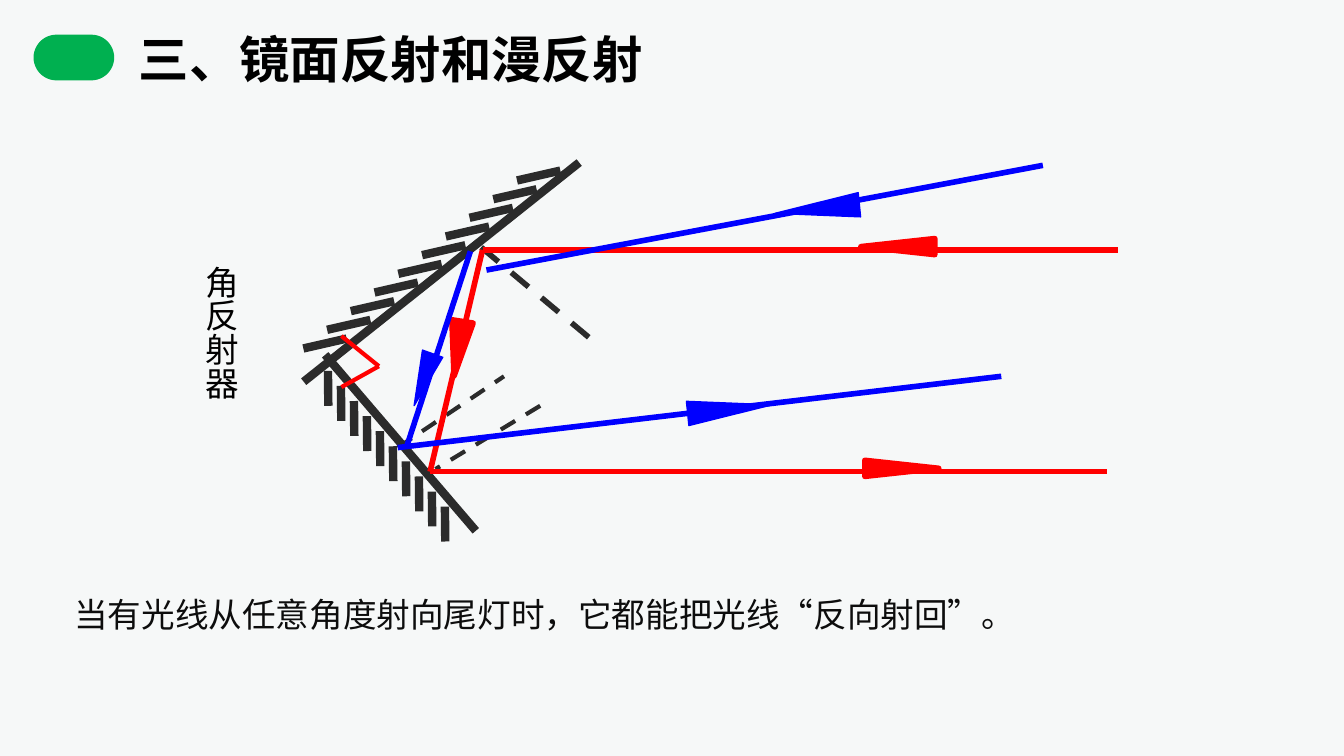
from dataclasses import dataclass
from typing import NamedTuple

from lxml import etree
from pptx import Presentation
from pptx.dml.color import RGBColor
from pptx.enum.dml import MSO_LINE
from pptx.enum.lang import MSO_LANGUAGE_ID
from pptx.enum.shapes import MSO_CONNECTOR, MSO_SHAPE
from pptx.enum.text import MSO_AUTO_SIZE, PP_ALIGN
from pptx.oxml.ns import qn
from pptx.slide import Slide
from pptx.text.text import _Paragraph
from pptx.util import Pt

STRAIGHT = MSO_CONNECTOR.STRAIGHT
TRIANGLE = MSO_SHAPE.ISOSCELES_TRIANGLE
ROUNDED = MSO_SHAPE.ROUNDED_RECTANGLE
DASH = MSO_LINE.DASH
GROW = MSO_AUTO_SIZE.SHAPE_TO_FIT_TEXT
CENTER = PP_ALIGN.CENTER
CHINESE = MSO_LANGUAGE_ID.SIMPLIFIED_CHINESE


@dataclass(frozen=True)
class Theme:
    background: str = "F6F8F8"
    accent: str = "00B050"
    mirror: str = "2B2B2B"
    red: str = "FF0000"
    blue: str = "0000FF"
    black: str = "000000"
    body: str = "0D0D0D"
    font: str = "Arial"
    title_size: float = 27
    body_size: float = 18
    mirror_width: float = 4.5
    ray_width: float = 3
    thin_width: float = 2.25
    edge_width: float = 0.75


THEME = Theme()


class Point(NamedTuple):
    x: float
    y: float


class Box(NamedTuple):
    left: float
    top: float
    width: float
    height: float


class Line(NamedTuple):
    start: Point
    end: Point
    color: str
    width: float
    dashed: bool = False


class Mirror(NamedTuple):
    surface: Line
    first_hatch: Point
    step: Point
    hatch: Point


class Ray(NamedTuple):
    line: Line
    head_center: Point
    head_width: float
    head_length: float
    rotation: float
    edge: float


def draw_line(slide: Slide, line: Line) -> None:
    connector = slide.shapes.add_connector(
        STRAIGHT, *(Pt(v) for v in (*line.start, *line.end)))
    connector.line.color.rgb = RGBColor.from_string(line.color)
    connector.line.width = Pt(line.width)
    if line.dashed:
        connector.line.dash_style = DASH
    properties = connector._element.find(qn("p:spPr"))
    etree.SubElement(properties, qn("a:effectLst"))


def draw_mirror(slide: Slide, mirror: Mirror, hatches: int = 10) -> None:
    for i in range(hatches):
        start = Point(mirror.first_hatch.x + i * mirror.step.x,
                      mirror.first_hatch.y + i * mirror.step.y)
        end = Point(start.x + mirror.hatch.x, start.y + mirror.hatch.y)
        draw_line(slide, Line(start, end, THEME.mirror, THEME.mirror_width))
    draw_line(slide, mirror.surface)


def draw_ray(slide: Slide, ray: Ray) -> None:
    draw_line(slide, ray.line)
    color = RGBColor.from_string(ray.line.color)
    head = slide.shapes.add_shape(
        TRIANGLE,
        Pt(ray.head_center.x - ray.head_width / 2),
        Pt(ray.head_center.y - ray.head_length / 2),
        Pt(ray.head_width), Pt(ray.head_length))
    head.rotation = ray.rotation
    head.shadow.inherit = False
    head.fill.solid()
    head.fill.fore_color.rgb = color
    head.line.color.rgb = color
    head.line.width = Pt(ray.edge)


def add_text(slide: Slide, box: Box, text: str, size: float, color: str,
             bold: bool = False, vertical: bool = False) -> _Paragraph:
    frame = slide.shapes.add_textbox(*(Pt(v) for v in box)).text_frame
    frame.word_wrap = True
    frame.auto_size = GROW
    frame.margin_left = frame.margin_right = Pt(5.2)
    frame.margin_top = frame.margin_bottom = Pt(2.7)
    if vertical:
        frame._txBody.bodyPr.set("vert", "eaVert")
    paragraph = frame.paragraphs[0]
    run = paragraph.add_run()
    run.text = text
    run.font.name = THEME.font
    run.font.size = Pt(size)
    run.font.bold = bold
    run.font.language_id = CHINESE
    run.font.color.rgb = RGBColor.from_string(color)
    return paragraph


def ray_line(start: Point, end: Point, color: str) -> Line:
    return Line(start, end, color, THEME.ray_width)


def mirror_line(start: Point, end: Point) -> Line:
    return Line(start, end, THEME.mirror, THEME.mirror_width)


# Points where the rays meet the mirrors
RED_UPPER, RED_LOWER = Point(258.5, 133.9), Point(230.4, 252.7)
BLUE_UPPER, BLUE_LOWER = Point(252, 134.6), Point(213.1, 239.8)
CORNER_TIP = Point(203, 196.2)

MIRRORS = [
    Mirror(mirror_line(Point(310.3, 87.1), Point(162.7, 204.5)),
           Point(300.2, 91.4), Point(-12.72, 10), Point(-23.2, 5.3)),
    Mirror(mirror_line(Point(174.2, 190.1), Point(254.9, 284.4)),
           Point(175.7, 198.7), Point(6.96, 8.08), Point(0.2, 18.7)),
]
NORMALS = [
    Line(Point(257.8, 132.5), Point(319.7, 184.3), THEME.mirror, THEME.ray_width, True),
    Line(Point(289.4, 217.4), Point(233.3, 251.3), THEME.mirror, THEME.thin_width, True),
    Line(BLUE_LOWER, Point(270, 201.6), THEME.mirror, THEME.thin_width, True),
]
RIGHT_ANGLE = [
    Line(Point(182.9, 180), CORNER_TIP, THEME.red, THEME.thin_width),
    Line(CORNER_TIP, Point(182.9, 207.4), THEME.red, THEME.thin_width),
]
RED_RAYS = [
    Ray(ray_line(RED_UPPER, Point(599, 133.9), THEME.red),
        Point(481, 132.1), 8.6, 39.6, 270, THEME.ray_width),
    Ray(ray_line(RED_LOWER, Point(593.3, 252.7), THEME.red),
        Point(483.1, 250.9), 8.6, 39.6, 90, THEME.ray_width),
    Ray(ray_line(RED_UPPER, RED_LOWER, THEME.red),
        Point(245.5, 186.8), 11.5, 29.5, 188.8, THEME.ray_width),
]
BLUE_RAYS = [
    Ray(ray_line(Point(260.6, 144.7), Point(558.7, 88.6), THEME.blue),
        Point(437.8, 112), 13, 45.4, 264.2, THEME.edge_width),
    Ray(ray_line(BLUE_UPPER, Point(218.2, 238.3), THEME.blue),
        Point(226.8, 203.4), 11.5, 29.5, 199.6, THEME.edge_width),
    Ray(ray_line(BLUE_LOWER, Point(536.4, 201.6), THEME.blue),
        Point(391, 219.2), 13, 45.4, 84.2, THEME.edge_width),
]


def main() -> None:
    presentation = Presentation()
    presentation.slide_width, presentation.slide_height = Pt(720), Pt(405)
    slide = presentation.slides.add_slide(presentation.slide_layouts[6])
    slide.background.fill.solid()
    slide.background.fill.fore_color.rgb = RGBColor.from_string(THEME.background)

    # Title marker
    marker = slide.shapes.add_shape(ROUNDED, Pt(18), Pt(18.6), Pt(43.2), Pt(24.5))
    marker.adjustments[0] = 0.5
    marker.shadow.inherit = False
    marker.fill.solid()
    marker.fill.fore_color.rgb = RGBColor.from_string(THEME.accent)
    marker.line.fill.background()

    # Corner reflector and light rays
    for mirror in MIRRORS:
        draw_mirror(slide, mirror)
    for normal in NORMALS:
        draw_line(slide, normal)
    for ray in RED_RAYS:
        draw_ray(slide, ray)
    for side in RIGHT_ANGLE:
        draw_line(slide, side)
    for ray in BLUE_RAYS:
        draw_ray(slide, ray)

    # Title, label and explanation
    add_text(slide, Box(69.1, 12.2, 332.6, 38.2), "三、镜面反射和漫反射",
             THEME.title_size, THEME.black, bold=True)
    label = add_text(slide, Box(102.2, 139.7, 32.4, 135.4), "角反射器",
                     THEME.body_size, THEME.black, vertical=True)
    label.alignment = CENTER
    explanation = add_text(slide, Box(18.7, 304.6, 652.3, 38.2),
                           "当有光线从任意角度射向尾灯时，它都能把光线“反向射回”。",
                           THEME.body_size, THEME.body)
    explanation.line_spacing = 1.5
    explanation._p.get_or_add_pPr().set("indent", str(Pt(16)))

    presentation.save("out.pptx")


if __name__ == "__main__":
    main()
